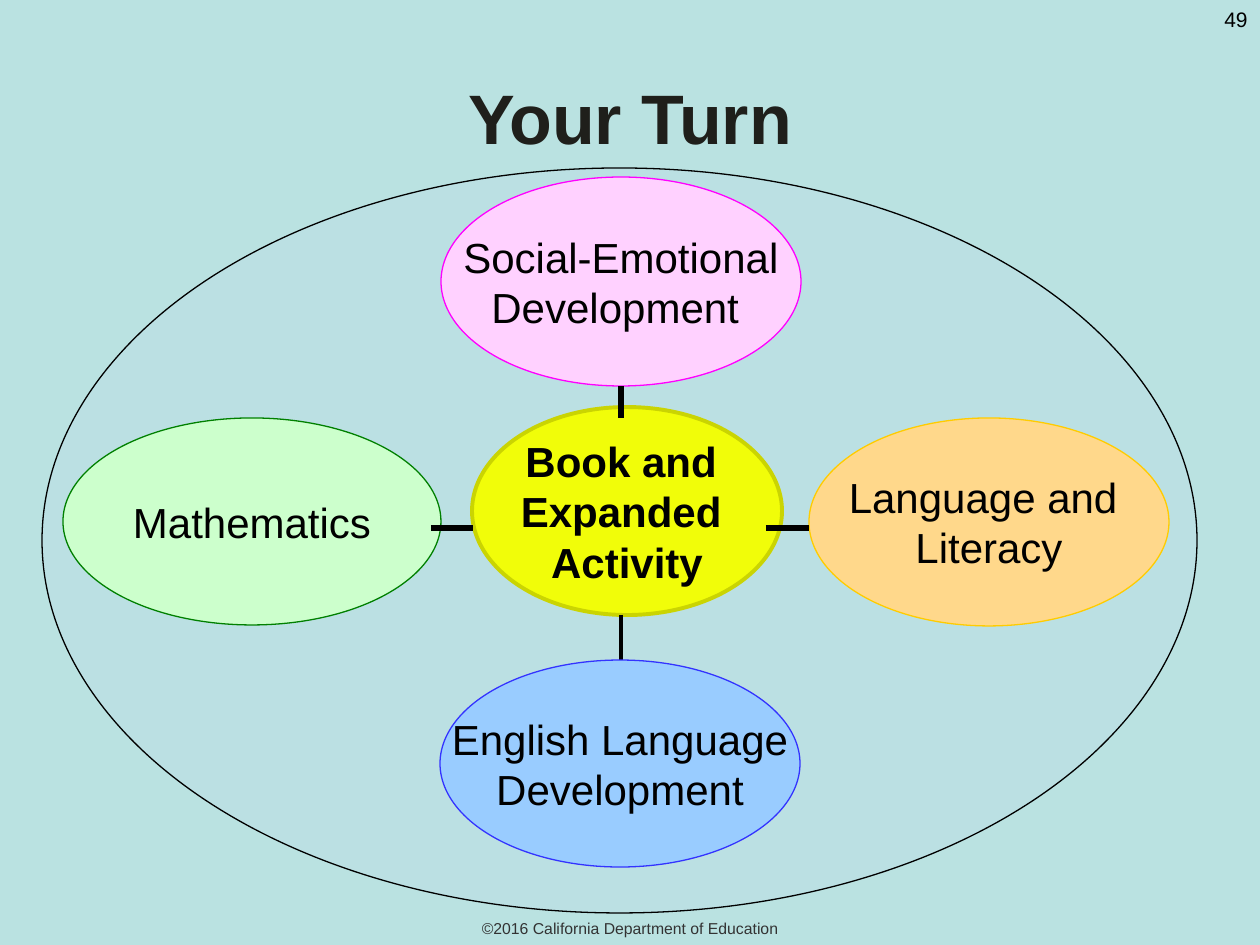
"""Build the Your Turn slide: one activity linked to four learning domains."""
from lxml import etree
from pptx import Presentation
from pptx.dml.color import RGBColor
from pptx.enum.shapes import MSO_CONNECTOR, MSO_SHAPE
from pptx.enum.text import MSO_ANCHOR, PP_ALIGN
from pptx.oxml.ns import qn
from pptx.util import Emu, Pt

OVAL, STRAIGHT = MSO_SHAPE.OVAL, MSO_CONNECTOR.STRAIGHT
TOP, MIDDLE = MSO_ANCHOR.TOP, MSO_ANCHOR.MIDDLE
CENTER, RIGHT = PP_ALIGN.CENTER, PP_ALIGN.RIGHT
EMU_PER_PX = 914400 / 126

COLORS = {
    "page": "BAE2E1", "ink": "000000", "title": "1F1F1B", "footer": "333333",
    "ring": "BBE0E3",
    "language": "FFD88B", "language_line": "FFCC00",
    "social": "FFD1FF", "social_line": "FF00FF",
    "math": "CCFFCC", "math_line": "008000",
    "activity": "F1FD09", "activity_line": "CAD402",
    "english": "99CCFF", "english_line": "3333FF",
}

LABELS = [
    ("49", (1166, 0, 94, 38), 12, "ink", False, RIGHT, TOP),
    ("©2016 California Department of Education", (0, 912, 1260, 32), 9, "footer", False, CENTER, MIDDLE),
    ("Your Turn", (63, 38, 1134, 157), 40, "title", True, CENTER, MIDDLE),
]
RING = (42, 168, 1155, 745)
DOMAINS = [
    ("language", (809, 418, 360, 208), ["Language and ", "Literacy"]),
    ("social", (441, 177, 360, 209), ["Social-Emotional", "Development "]),
    ("math", (63, 418, 378, 207), ["Mathematics"]),
]
ACTIVITY = ("activity", (472, 407, 310, 208), ["Book and ", "Expanded ", "Activity"])
ENGLISH = ("english", (440, 660, 360, 207), ["English Language", "Development"])
LINKS = [
    ((431, 528, 473, 528), 3),
    ((766, 528, 809, 528), 3),
    ((621, 615, 621, 692), 2.25),
    ((621, 386, 621, 418), 3),
]


def px(*values):
    return [Emu(round(value * EMU_PER_PX)) for value in values]


def color(name):
    return RGBColor.from_string(COLORS[name])


def write(frame, lines, size, ink, bold, align, anchor):
    frame.vertical_anchor = anchor
    for index, line in enumerate(lines):
        para = frame.add_paragraph() if index else frame.paragraphs[0]
        para.text = line
        para.alignment = align
        font = para.font
        font.name, font.size, font.bold = "Arial", Pt(size), bold
        font.color.rgb = color(ink)


def add_label(page, text, place, *style):
    frame = page.shapes.add_textbox(*px(*place)).text_frame
    frame.word_wrap = True
    write(frame, [text], *style)


def add_oval(page, place, fill, line, width=0.75):
    oval = page.shapes.add_shape(OVAL, *px(*place))
    oval.shadow.inherit = False
    oval.fill.solid()
    oval.fill.fore_color.rgb = color(fill)
    oval.line.color.rgb = color(line)
    oval.line.width = Pt(width)
    return oval


def add_topic(page, name, place, lines, width=0.75, bold=False):
    frame = add_oval(page, place, name, name + "_line", width).text_frame
    frame.margin_left = frame.margin_right = 0
    frame.margin_top = frame.margin_bottom = 0
    frame.word_wrap = False
    write(frame, lines, 24, "ink", bold, CENTER, MIDDLE)


def add_link(page, ends, width):
    link = page.shapes.add_connector(STRAIGHT, *px(*ends))
    link.line.color.rgb = color("ink")
    link.line.width = Pt(width)
    etree.SubElement(link._element.spPr, qn("a:effectLst"))


def main():
    deck = Presentation()
    deck.slide_width, deck.slide_height = px(1260, 945)
    page = deck.slides.add_slide(deck.slide_layouts[6])
    page.background.fill.solid()
    page.background.fill.fore_color.rgb = color("page")

    add_oval(page, RING, "ring", "ink")
    for label in LABELS:
        add_label(page, *label)
    for domain in DOMAINS:
        add_topic(page, *domain)
    add_topic(page, *ACTIVITY, width=2.25, bold=True)
    for link in LINKS:
        add_link(page, *link)
    add_topic(page, *ENGLISH)
    deck.save("out.pptx")


if __name__ == "__main__":
    main()
